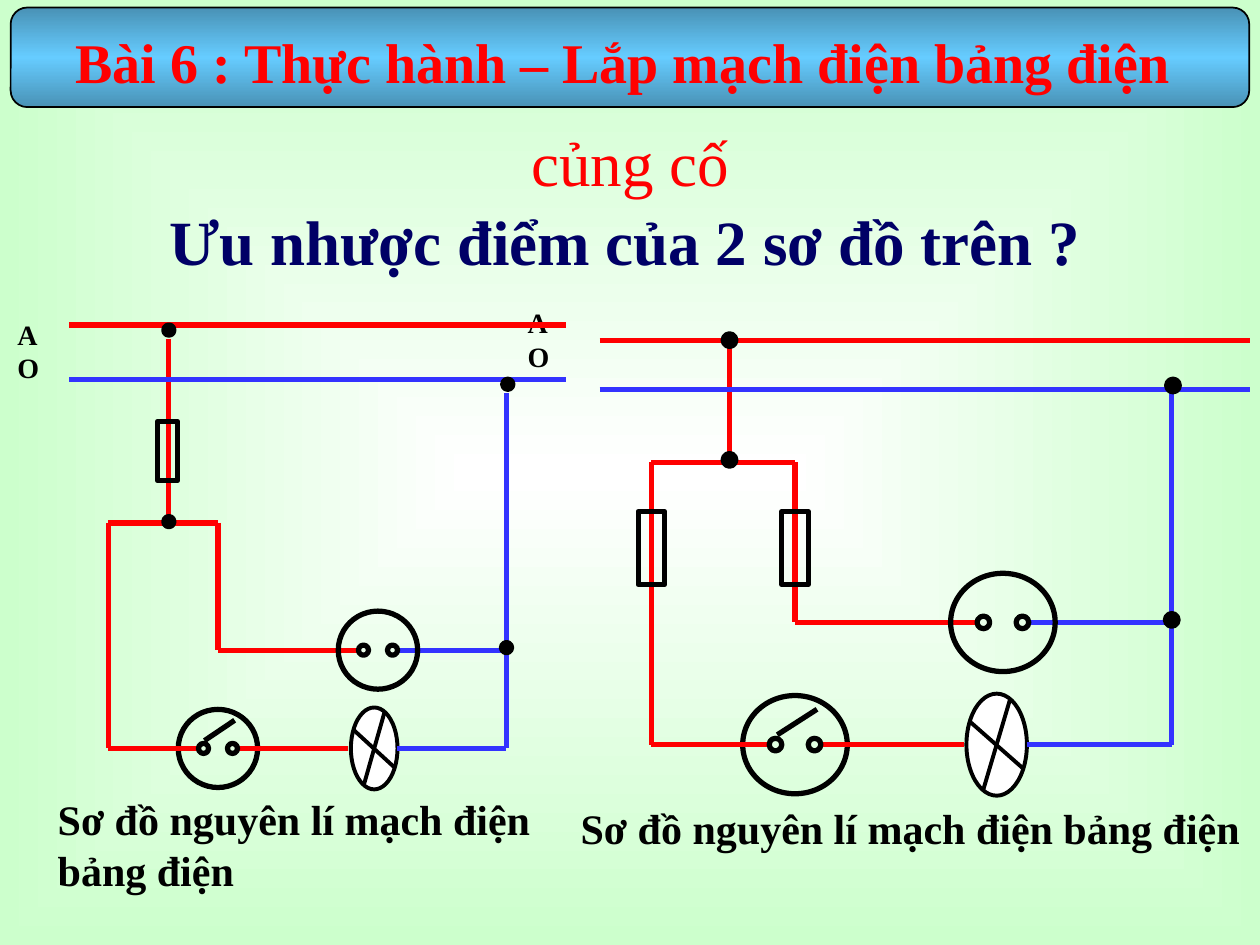
from dataclasses import dataclass

from lxml import etree
from pptx import Presentation
from pptx.dml.color import RGBColor
from pptx.enum.shapes import MSO_CONNECTOR, MSO_SHAPE
from pptx.enum.text import MSO_ANCHOR, MSO_AUTO_SIZE, PP_ALIGN
from pptx.oxml.ns import qn
from pptx.util import Inches, Pt

OVAL, RECT, ROUNDED = MSO_SHAPE.OVAL, MSO_SHAPE.RECTANGLE, MSO_SHAPE.ROUNDED_RECTANGLE
STRAIGHT = MSO_CONNECTOR.STRAIGHT
LEFT, CENTER = PP_ALIGN.LEFT, PP_ALIGN.CENTER


@dataclass(frozen=True)
class Theme:
    font: str = "Times New Roman"
    live: str = "FF0000"
    neutral: str = "3333FF"
    ink: str = "000000"
    paper: str = "FFFFFF"
    mint: str = "CCFFCC"
    banner_edge: str = "4992B6"
    banner_middle: str = "66CCFF"
    question: str = "000066"
    heading_size: int = 32
    large_size: int = 36
    caption_size: int = 24
    label_size: int = 16
    heavy: float = 3
    medium: float = 2.25


THEME = Theme()


def wire(shapes, start, end, color, weight=THEME.heavy):
    line = shapes.add_connector(STRAIGHT, *(Inches(v) for v in (*start, *end)))
    line.line.color.rgb = RGBColor.from_string(color)
    line.line.width = Pt(weight)
    etree.SubElement(line.element.spPr, qn("a:effectLst"))


def outlined(shapes, kind, center, size, fill=None, weight=THEME.heavy):
    """Add a black-outlined shape placed by its centre."""
    (x, y), (w, h) = center, size
    part = shapes.add_shape(kind, Inches(x - w / 2), Inches(y - h / 2), Inches(w), Inches(h))
    part.shadow.inherit = False
    part.line.color.rgb = RGBColor.from_string(THEME.ink)
    part.line.width = Pt(weight)
    if fill:
        part.fill.solid()
        part.fill.fore_color.rgb = RGBColor.from_string(fill)
    else:
        part.fill.background()
    return part


prs = Presentation()
prs.slide_width, prs.slide_height = Inches(10), Inches(7.5)
slide = prs.slides.add_slide(prs.slide_layouts[5])

# Background and banner gradients
banner = outlined(slide.shapes, ROUNDED, (5, 0.455), (9.83, 0.79), THEME.paper, 1)
banner.fill.gradient()
slide.background.fill.gradient()
gradients = [
    (slide.background.fill, slide.element, [(0, THEME.paper), (100, THEME.mint)], None),
    (banner.fill, banner.element,
     [(0, THEME.banner_edge), (50, THEME.banner_middle), (100, THEME.banner_edge)], 90),
]
for fill, owner, stops, angle in gradients:
    gradient = next(owner.iter(qn("a:gradFill")))
    for child in list(gradient):
        gradient.remove(child)
    stop_list = etree.SubElement(gradient, qn("a:gsLst"))
    for position, color in stops:
        stop = etree.SubElement(stop_list, qn("a:gs"), pos=str(position * 1000))
        etree.SubElement(stop, qn("a:srgbClr"), val=color)
    if angle is None:
        shade = etree.SubElement(gradient, qn("a:path"), path="shape")
        etree.SubElement(shade, qn("a:fillToRect"),
                         {side: "50000" for side in ("l", "t", "r", "b")})
    else:
        etree.SubElement(gradient, qn("a:lin"), ang=str(angle * 60000), scaled="1")

# Circuits: positions are centre lines, sizes are width and height
circuits = [
    dict(rail=(4.76, 9.92), live_y=2.7, neutral_y=3.09,
         tap_x=5.79, tap_y=2.7, split_y=3.67, left_x=5.17, right_x=6.31,
         socket=(7.96, 4.94), lamp=(7.91, 5.91), return_x=9.3, return_y=3.09,
         lamp_size=(0.48, 0.81), ring_size=(0.83, 0.78), pin=0.1, pin_gap=0.155,
         fuses=[(5.17, 4.35), (6.31, 4.35)], fuse_size=(0.21, 0.58),
         joints=[(5.79, 2.7), (5.79, 3.65), (9.31, 3.06), (9.3, 4.92)],
         label=(4.09, 2.38, 0.54, 1.3), caption=(4.51, 6.32, 5.5, 1.02)),
    dict(rail=(0.55, 4.49), live_y=2.58, neutral_y=3.01,
         tap_x=1.34, tap_y=2.69, split_y=4.15, left_x=0.86, right_x=1.73,
         socket=(3, 5.16), lamp=(2.97, 5.94), return_x=4.02, return_y=3.12,
         lamp_size=(0.37, 0.65), ring_size=(0.63, 0.62), pin=0.08, pin_gap=0.115,
         fuses=[(1.33, 3.58)], fuse_size=(0.16, 0.47),
         joints=[(1.34, 2.62), (1.34, 4.14), (4.03, 3.05), (4.02, 5.14)],
         label=(0.04, 2.47, 0.41, 1.24), caption=(0.36, 6.25, 4.2, 0.98)),
]
lamp_cross = [((-0.45, -0.23), (0.45, 0.24)), ((0.22, -0.44), (-0.22, 0.44))]
switch_lever = ((-0.17, -0.1), (0.21, -0.36))
texts = []

for c in circuits:
    shapes = slide.shapes.add_group_shape().shapes
    lamp_x, lamp_y = c["lamp"]
    socket_x, socket_y = c["socket"]
    left_x, right_x, split_y = c["left_x"], c["right_x"], c["split_y"]
    tap_x, return_x = c["tap_x"], c["return_x"]
    switch = (right_x, lamp_y)
    pin_size = (c["pin"], c["pin"])
    reach = c["pin_gap"] + c["pin"] / 2
    lamp_half = c["lamp_size"][0] / 2

    outlined(shapes, OVAL, c["lamp"], c["lamp_size"], THEME.paper, THEME.medium)
    outlined(shapes, OVAL, switch, c["ring_size"])
    strokes = [(c["lamp"], c["lamp_size"], ends, THEME.medium) for ends in lamp_cross]
    strokes.append((switch, c["ring_size"], switch_lever, THEME.heavy))
    for (x, y), (w, h), ends, weight in strokes:
        start, end = [(x + dx * w, y + dy * h) for dx, dy in ends]
        wire(shapes, start, end, THEME.ink, weight)

    rail_start, rail_end = c["rail"]
    live_wires = [
        ((rail_start, c["live_y"]), (rail_end, c["live_y"])),
        ((tap_x, c["tap_y"]), (tap_x, split_y)),
        ((left_x, split_y), (right_x, split_y)),
        ((left_x, split_y), (left_x, lamp_y)),
        ((right_x, split_y), (right_x, socket_y)),
        ((right_x, socket_y), (socket_x - reach, socket_y)),
        ((left_x, lamp_y), (right_x - reach, lamp_y)),
        ((right_x + reach, lamp_y), (lamp_x - lamp_half - 0.02, lamp_y)),
    ]
    neutral_wires = [
        ((rail_start, c["neutral_y"]), (rail_end, c["neutral_y"])),
        ((socket_x + reach, socket_y), (return_x, socket_y)),
        ((lamp_x + lamp_half, lamp_y), (return_x, lamp_y)),
        ((return_x, lamp_y), (return_x, c["return_y"])),
    ]
    for color, wires in ((THEME.live, live_wires), (THEME.neutral, neutral_wires)):
        for start, end in wires:
            wire(shapes, start, end, color)

    outlined(shapes, OVAL, c["socket"], c["ring_size"])
    for fuse in c["fuses"]:
        outlined(shapes, RECT, fuse, c["fuse_size"])
    for x, y in (c["socket"], switch):
        for side in (-1, 1):
            outlined(shapes, OVAL, (x + side * c["pin_gap"], y), pin_size)
    for joint in c["joints"]:
        outlined(shapes, OVAL, joint, pin_size, THEME.ink)

    texts += [
        (shapes, c["label"], ["A", "O"], THEME.label_size, THEME.ink, True, LEFT),
        (shapes, c["caption"], ["Sơ đồ nguyên lí mạch điện bảng điện"],
         THEME.caption_size, THEME.ink, True, LEFT),
    ]

# Wording; the lesson heading goes into the title placeholder, in front of the banner
title = slide.shapes.title
title.element.getparent().append(title.element)
texts += [
    (slide.shapes, (1.25, 1.56, 8.57, 0.71), ["Ưu nhược điểm của 2 sơ đồ trên ?"],
     THEME.large_size, THEME.question, True, LEFT),
    (slide.shapes, (2.46, 0.93, 5.08, 0.66), ["củng cố"],
     THEME.large_size, THEME.live, False, CENTER),
    (None, (0.5, 0.17, 9.4, 0.63), ["Bài 6 : Thực hành – Lắp mạch điện bảng điện"],
     THEME.heading_size, THEME.live, True, LEFT),
]
for shapes, place, lines, size, color, bold, align in texts:
    left, top, width, height = (Inches(v) for v in place)
    if shapes is None:
        box = title
        box.left, box.top, box.width, box.height = left, top, width, height
    else:
        box = shapes.add_textbox(left, top, width, height)
    frame = box.text_frame
    frame.word_wrap = True
    frame.auto_size = MSO_AUTO_SIZE.NONE
    frame.vertical_anchor = MSO_ANCHOR.TOP
    paragraph = frame.paragraphs[0]
    paragraph.alignment = align
    paragraph.space_before = Pt(3)
    for number, line in enumerate(lines):
        if number:
            paragraph.add_line_break()
        run = paragraph.add_run()
        run.text = line
        run.font.name = THEME.font
        run.font.size = Pt(size)
        run.font.bold = bold
        run.font.color.rgb = RGBColor.from_string(color)

prs.save("out.pptx")
